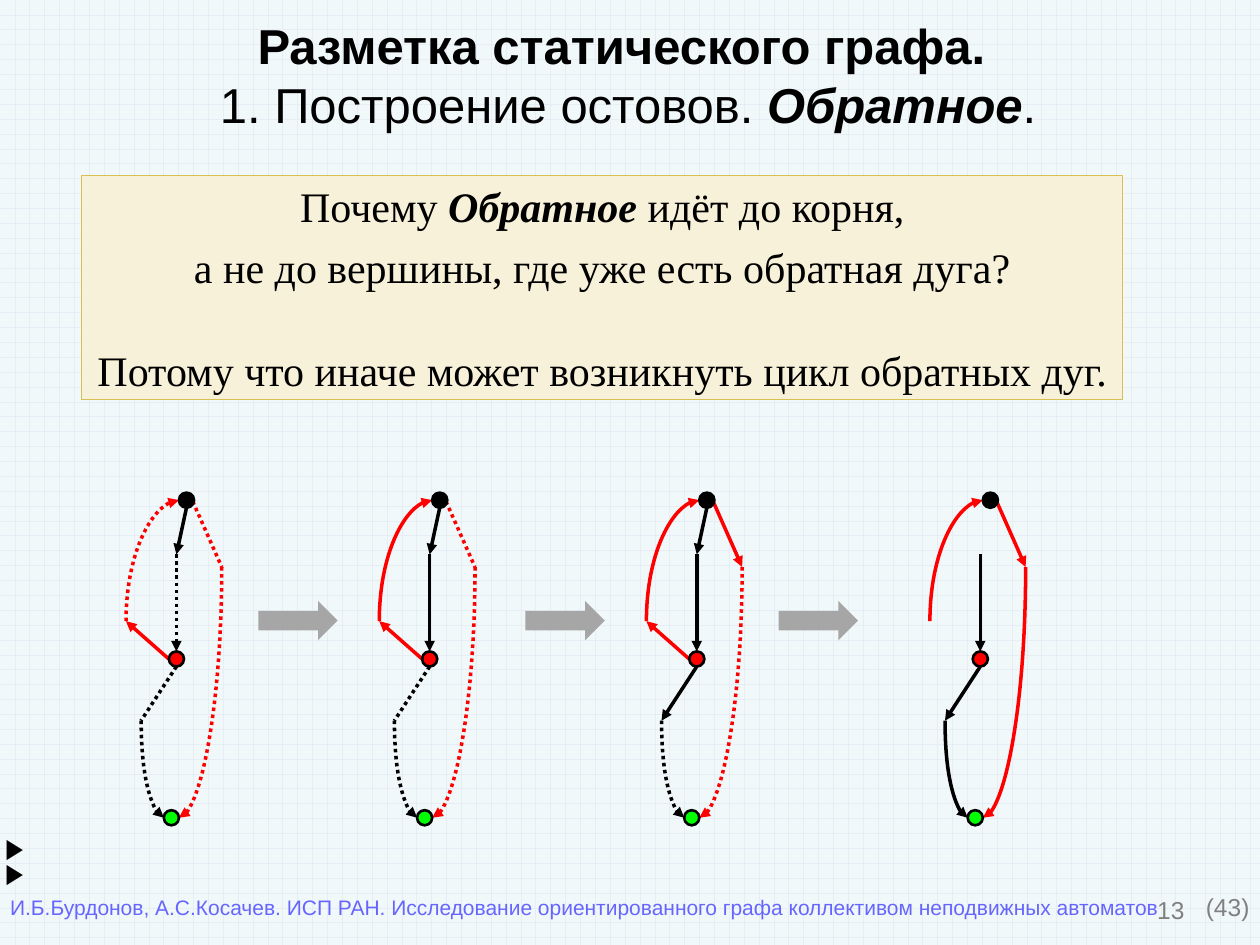
from typing import NamedTuple

from lxml import etree
from pptx import Presentation
from pptx.dml.color import RGBColor
from pptx.enum.dml import MSO_LINE, MSO_PATTERN
from pptx.enum.shapes import MSO_CONNECTOR, MSO_SHAPE
from pptx.enum.text import MSO_ANCHOR, MSO_AUTO_SIZE, PP_ALIGN
from pptx.oxml.ns import qn
from pptx.util import Inches, Pt

STRAIGHT, CURVE = MSO_CONNECTOR.STRAIGHT, MSO_CONNECTOR.CURVE
OVAL, ARROW, RECT = MSO_SHAPE.OVAL, MSO_SHAPE.RIGHT_ARROW, MSO_SHAPE.RECTANGLE
LEFT, CENTER, RIGHT = PP_ALIGN.LEFT, PP_ALIGN.CENTER, PP_ALIGN.RIGHT
DOTTED = MSO_LINE.ROUND_DOT
BLACK, RED, GREEN, GREY = "000000", "FF0000", "00FF00", "808080"
SANS, SERIF = "Arial", "Times New Roman"


class Run(NamedTuple):
    text: str
    bold: bool = False
    italic: bool = False


class Style(NamedTuple):
    font: str
    size: float
    color: str


class Label(NamedTuple):
    box: tuple
    run: Run
    style: Style
    align: PP_ALIGN = LEFT
    inset: float = 0
    wrap: bool = False


class Node(NamedTuple):
    x: float  # centre, relative to the root of the graph
    y: float
    color: str


class Edge(NamedTuple):
    start: tuple  # x is relative to the root of the graph
    end: tuple
    color: str
    curved: bool = False


class Graph(NamedTuple):
    x: float
    dotted: set
    absent: set = frozenset()


NODES = [Node(0, 3.97, BLACK), Node(-0.08, 5.23, RED), Node(-0.12, 6.49, GREEN)]
EDGES = {
    "down": Edge((0, 4.03), (-0.08, 4.4), BLACK),
    "trunk": Edge((-0.08, 4.4), (-0.08, 5.17), BLACK, True),
    "back": Edge((-0.14, 5.23), (-0.48, 4.93), RED),
    "rise": Edge((-0.48, 4.93), (-0.06, 3.97), RED, True),
    "right": Edge((0.05, 3.98), (0.28, 4.5), RED),
    "fall": Edge((0.28, 4.5), (-0.06, 6.49), RED, True),
    "lower": Edge((-0.08, 5.29), (-0.36, 5.72), BLACK),
    "tail": Edge((-0.36, 5.72), (-0.18, 6.49), BLACK, True),
}
GRAPHS = [
    Graph(1.48, {"trunk", "rise", "right", "fall", "lower", "tail"}),
    Graph(3.49, {"right", "fall", "lower", "tail"}),
    Graph(5.61, {"fall", "tail"}),
    Graph(7.86, set(), {"down", "back"}),
]
STEP_ARROWS = [2.05, 4.17, 6.18]
MARK = Style(SERIF, 16, BLACK)
LABELS = [
    Label((7.17, 7.05, 2.33, 0.52), Run("13"), Style(SANS, 14, GREY), RIGHT, 0.1, True),
    Label((9.57, 7.08, 0.35, 0.23), Run("(43)"), Style(SANS, 14, GREY)),
    Label((0.08, 7.1, 9.19, 0.2),
          Run("И.Б.Бурдонов, А.С.Косачев. ИСП РАН. Исследование ориентированного "
              "графа коллективом неподвижных автоматов"), Style(SANS, 12, "6666FF")),
    Label((0.04, 6.59, 0.12, 0.27), Run("▶", True), MARK),
    Label((0.04, 6.79, 0.12, 0.27), Run("▶", True), MARK),
]
TITLE = [
    [Run("Разметка статического графа. ", True)],
    [Run("1. Построение остовов. "), Run("Обратное", True, True), Run(".")],
]
QUESTION = [
    [Run("Почему "), Run("Обратное ", True, True), Run("идёт до корня,")],
    [Run("а не до вершины, где уже есть обратная дуга?")],
    [Run("Потому что иначе может возникнуть цикл обратных дуг.")],
]


def rgb(color: str) -> RGBColor:
    return RGBColor.from_string(color)


def inches(values) -> list:
    return [Inches(v) for v in values]


def write(tf, paragraphs: list, style: Style, align: PP_ALIGN) -> None:
    for i, runs in enumerate(paragraphs):
        p = tf.add_paragraph() if i else tf.paragraphs[0]
        p.alignment = align
        p.space_before = Pt(0)
        for run in runs:
            r = p.add_run()
            r.text = run.text
            r.font.name, r.font.size = style.font, Pt(style.size)
            r.font.bold, r.font.italic = run.bold, run.italic
            r.font.color.rgb = rgb(style.color)


def set_frame(tf, inset_x: float, inset_y: float, wrap: bool) -> None:
    tf.margin_left = tf.margin_right = Inches(inset_x)
    tf.margin_top = tf.margin_bottom = Inches(inset_y)
    tf.word_wrap = wrap
    tf.auto_size = MSO_AUTO_SIZE.NONE


def add_shape(s, kind, box: tuple, fill: str, line: str = "", width: float = 0):
    sp = s.shapes.add_shape(kind, *inches(box))
    sp.shadow.inherit = False
    sp.fill.solid()
    sp.fill.fore_color.rgb = rgb(fill)
    if line:
        sp.line.color.rgb = rgb(line)
        sp.line.width = Pt(width)
    else:
        sp.line.fill.background()
    return sp


def add_label(s, label: Label) -> None:
    tf = s.shapes.add_textbox(*inches(label.box)).text_frame
    set_frame(tf, label.inset, label.inset / 2, label.wrap)
    write(tf, [[label.run]], label.style, label.align)


def add_curve(s, x1: float, y1: float, x2: float, y2: float):
    """Curve that leaves its start vertically: drawn lying down, then turned."""
    cx, cy = (x1 + x2) / 2, (y1 + y2) / 2
    turn = 270 if x2 > x1 and y2 > y1 else 90
    sign = 1 if turn == 90 else -1
    u, v = sign * (y1 - cy), -sign * (x1 - cx)
    c = s.shapes.add_connector(CURVE, *inches((cx + u, cy + v, cx - u, cy - v)))
    spPr = c._element.spPr
    spPr.find(qn("a:xfrm")).set("rot", str(turn * 60000))
    if x1 != x2:
        spPr.find(qn("a:prstGeom")).set("prst", "curvedConnector2")
    return c


def add_edge(s, edge: Edge, x: float, dotted: bool) -> None:
    points = (x + edge.start[0], edge.start[1], x + edge.end[0], edge.end[1])
    if edge.curved:
        c = add_curve(s, *points)
    else:
        c = s.shapes.add_connector(STRAIGHT, *inches(points))
    c.line.color.rgb = rgb(edge.color)
    c.line.width = Pt(2)
    if dotted:
        c.line.dash_style = DOTTED
    spPr = c._element.spPr
    if edge.curved or not dotted:
        etree.SubElement(spPr.find(qn("a:ln")), qn("a:tailEnd"), type="triangle")
    etree.SubElement(spPr, qn("a:effectLst"))


def add_graph(s, graph: Graph) -> None:
    for name, edge in EDGES.items():
        if name not in graph.absent:
            add_edge(s, edge, graph.x, name in graph.dotted)
    for node in NODES:
        box = (graph.x + node.x - 0.06, node.y - 0.06, 0.12, 0.12)
        add_shape(s, OVAL, box, node.color, BLACK, 1.5)


def main() -> None:
    prs = Presentation()
    prs.slide_width, prs.slide_height = Inches(10), Inches(7.5)
    s = prs.slides.add_slide(prs.slide_layouts[5])

    # Background grid
    fill = s.background.fill
    fill.patterned()
    fill.pattern = MSO_PATTERN.HORIZONTAL_BRICK
    fill.fore_color.rgb, fill.back_color.rgb = rgb("E7EDF5"), rgb("F1F8F9")

    # Title
    title = s.shapes.title
    title.left, title.top, title.width, title.height = inches((0.2, 0.02, 9.57, 1.14))
    set_frame(title.text_frame, 0.1, 0.1, True)
    title.text_frame.vertical_anchor = MSO_ANCHOR.MIDDLE
    write(title.text_frame, TITLE, Style(SANS, 28, BLACK), CENTER)

    # Question and answer
    tf = add_shape(s, RECT, (0.65, 1.39, 8.26, 1.78), "F7F1D9", "DAC052", 0.5).text_frame
    set_frame(tf, 0.08, 0.04, False)
    tf.vertical_anchor = MSO_ANCHOR.TOP
    write(tf, QUESTION, Style(SERIF, 24, BLACK), CENTER)
    tf.paragraphs[0].space_after = Pt(6)
    tf.paragraphs[2].space_before = Pt(30)

    # Steps of the marking
    for graph in GRAPHS:
        add_graph(s, graph)
    for x in STEP_ARROWS:
        add_shape(s, ARROW, (x, 4.77, 0.63, 0.31), "A6A6A6")

    # Footer and marks
    for label in LABELS:
        add_label(s, label)

    prs.save("out.pptx")


if __name__ == "__main__":
    main()
